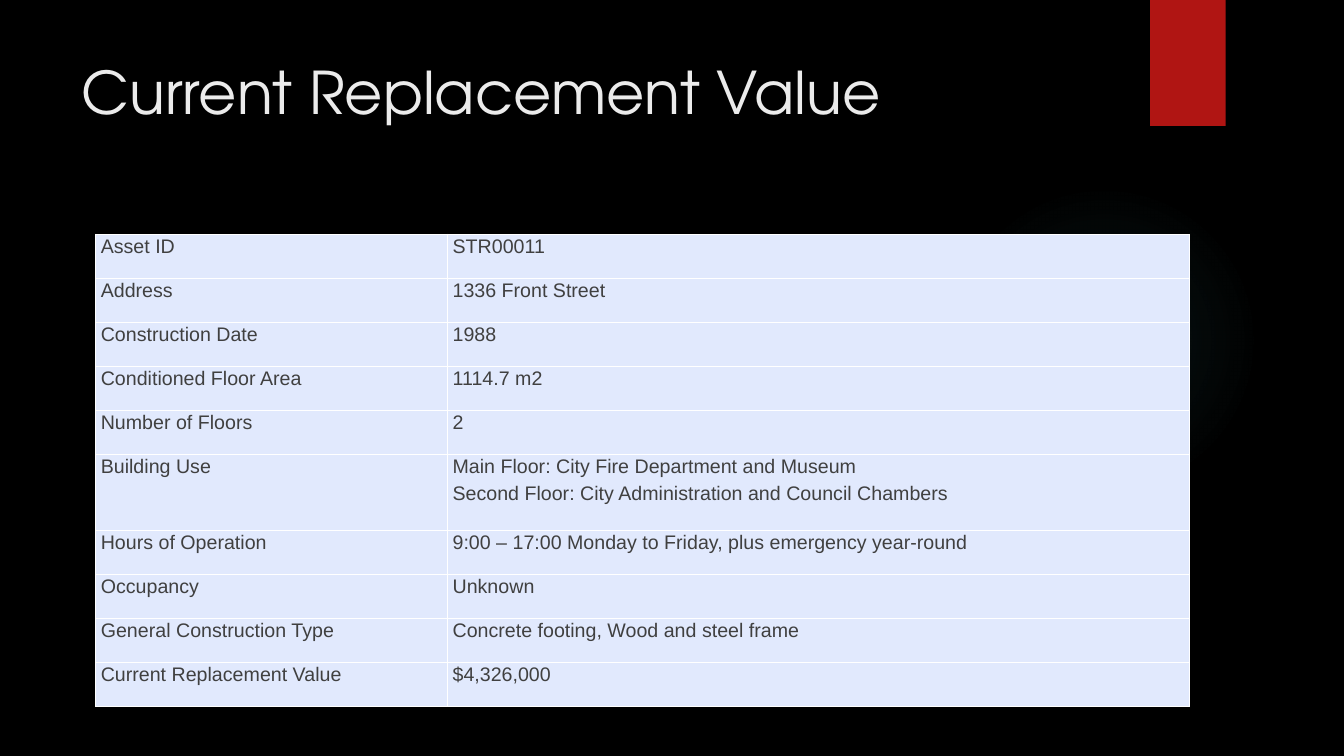
"""Build the Current Replacement Value slide with its building facts table."""
from pptx import Presentation
from pptx.dml.color import RGBColor
from pptx.enum.shapes import MSO_SHAPE as Shape
from pptx.enum.text import MSO_ANCHOR as Anchor, MSO_AUTO_SIZE as AutoSize, PP_ALIGN as Align
from pptx.oxml import parse_xml
from pptx.oxml.ns import nsdecls
from pptx.util import Pt

COLORS = {
    "background": "000000", "glow": "50B9C1", "accent": "B01513",
    "title": "EBEBEB", "cell": "E1E9FD", "border": "FFFFFF", "text": "404040",
}
FACTS = [
    ("Asset ID", "STR00011"),
    ("Address", "1336 Front Street"),
    ("Construction Date", "1988"),
    ("Conditioned Floor Area", "1114.7 m2"),
    ("Number of Floors", "2"),
    ("Building Use", "Main Floor: City Fire Department and Museum\n"
                     "Second Floor: City Administration and Council Chambers"),
    ("Hours of Operation", "9:00 – 17:00 Monday to Friday, plus emergency year-round"),
    ("Occupancy", "Unknown"),
    ("General Construction Type", "Concrete footing, Wood and steel frame"),
    ("Current Replacement Value", "$4,326,000"),
]
GLOW_STOPS = [(0, 7), (36, 6), (69, 0)]
COLUMN_WIDTHS = [251.3, 529.9]
ROW_HEIGHT, TALL_ROW_HEIGHT = 31.4, 54.6
FRAME_FORMAT = {"margin_left": 0, "margin_top": 0, "margin_right": 0, "margin_bottom": 0,
                "vertical_anchor": Anchor.TOP}
TITLE_FONT = {"name": "TeX Gyre Adventor", "size": Pt(42), "bold": False}
CELL_FONT = {"name": "Arial", "size": Pt(14), "bold": False}


def apply_format(target, values):
    for name, value in values.items():
        setattr(target, name, value)


def color(name):
    return RGBColor.from_string(COLORS[name])


deck = Presentation()
deck.slide_width, deck.slide_height = Pt(960), Pt(540)
page = deck.slides.add_slide(deck.slide_layouts[5])
page.background.fill.solid()
page.background.fill.fore_color.rgb = color("background")

glow = page.shapes.add_shape(Shape.OVAL, Pt(677.5), Pt(131.8), Pt(221.8), Pt(221.8))
glow.shadow.inherit = False
glow.line.fill.background()
glow.fill.background()
stops = "".join(
    f'<a:gs pos="{position * 1000}"><a:srgbClr val="{COLORS["glow"]}">'
    f'<a:alpha val="{opacity * 1000}"/></a:srgbClr></a:gs>'
    for position, opacity in GLOW_STOPS)
gradient = parse_xml(
    f'<a:gradFill {nsdecls("a")} rotWithShape="1"><a:gsLst>{stops}</a:gsLst>'
    '<a:path path="circle"><a:fillToRect l="50000" t="50000" r="50000" b="50000"/></a:path>'
    '</a:gradFill>')
properties = glow.element.spPr
properties.replace(properties.find("{*}noFill"), gradient)

ribbon = page.shapes.add_shape(Shape.RECTANGLE, Pt(821.5), 0, Pt(54), Pt(90))
ribbon.shadow.inherit = False
ribbon.line.fill.background()
ribbon.fill.solid()
ribbon.fill.fore_color.rgb = color("accent")

title = page.shapes.title
apply_format(title, {"left": Pt(51.1), "top": Pt(36), "width": Pt(792), "height": Pt(110.2)})
title.text_frame.text = "Current Replacement Value"
apply_format(title.text_frame, {"vertical_anchor": Anchor.TOP, "word_wrap": True,
                                "auto_size": AutoSize.NONE})
para = title.text_frame.paragraphs[0]
para.alignment = Align.LEFT
span = para.runs[0]
apply_format(span.font, TITLE_FONT)
span.font.color.rgb = color("title")

heights = [TALL_ROW_HEIGHT if "\n" in value else ROW_HEIGHT for label, value in FACTS]
frame = page.shapes.add_table(len(FACTS), len(COLUMN_WIDTHS), Pt(68.4), Pt(167.5),
                              Pt(sum(COLUMN_WIDTHS)), Pt(sum(heights)))
table = frame.table
apply_format(table, {"first_row": False, "horz_banding": False})
for column, width in zip(table.columns, COLUMN_WIDTHS):
    column.width = Pt(width)

for row, height, fact in zip(table.rows, heights, FACTS):
    row.height = Pt(height)
    for cell, text in zip(row.cells, fact):
        cell.text = text
        apply_format(cell, FRAME_FORMAT)
        cell_properties = cell._tc.get_or_add_tcPr()
        for side in "LRTB":
            cell_properties.append(parse_xml(
                f'<a:ln{side} {nsdecls("a")} w="{Pt(1)}"><a:solidFill>'
                f'<a:srgbClr val="{COLORS["border"]}"/></a:solidFill></a:ln{side}>'))
        cell.fill.solid()
        cell.fill.fore_color.rgb = color("cell")
        for index, para in enumerate(cell.text_frame.paragraphs):
            para._p.get_or_add_pPr().set("marL", str(Pt(3.6)))
            para.line_spacing = 1.07
            para.space_before = Pt(2.5 if index else 0)
            for span in para.runs:
                apply_format(span.font, CELL_FONT)
                span.font.color.rgb = color("text")

deck.save("out.pptx")
